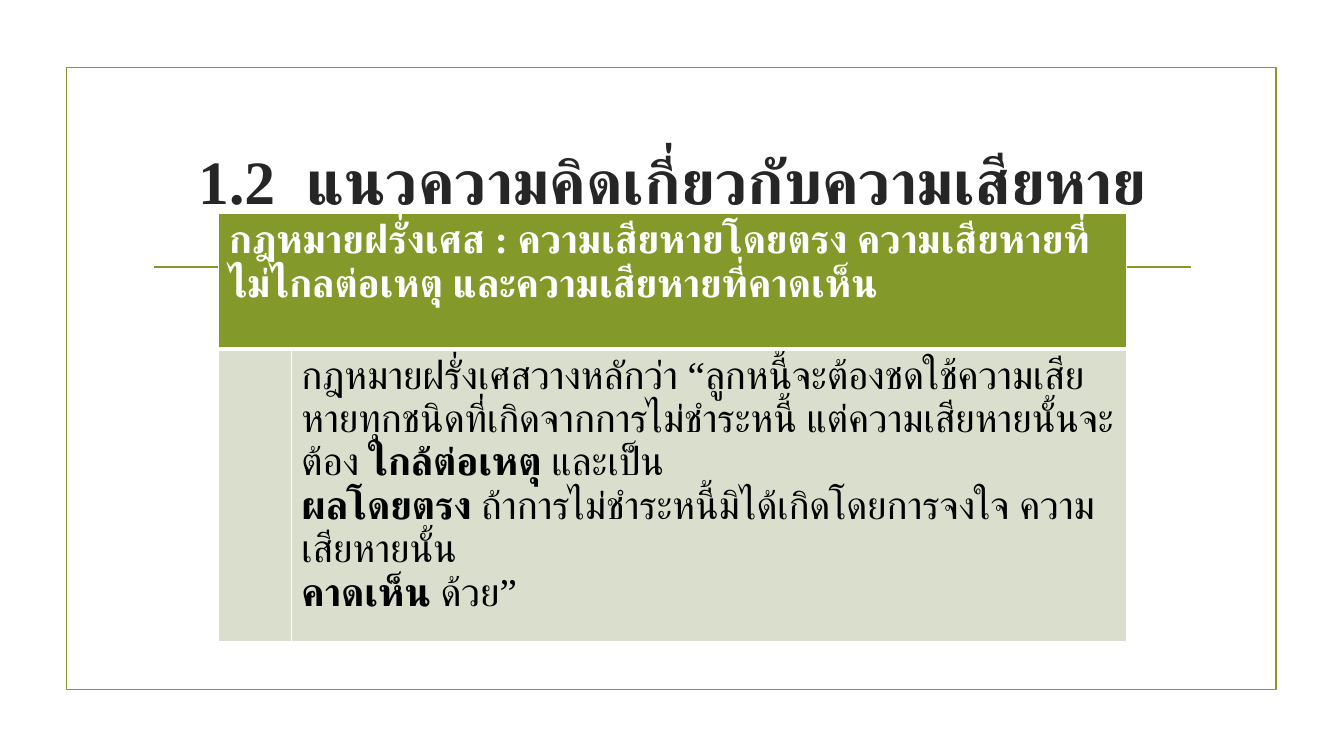
from pptx import Presentation
from pptx.dml.color import RGBColor
from pptx.enum.shapes import MSO_CONNECTOR, MSO_SHAPE
from pptx.enum.text import MSO_ANCHOR, PP_ALIGN
from pptx.oxml.ns import qn
from pptx.util import Inches, Pt
from lxml.etree import SubElement

COLORS = {"olive": "83992A", "pale": "D9DECD", "white": "FFFFFF",
          "black": "000000", "title": "262626"}
FONT = "Times New Roman"

TITLE = "1.2  แนวความคิดเกี่ยวกับความเสียหาย"
HEADING = "กฎหมายฝรั่งเศส : ความเสียหายโดยตรง ความเสียหายที่ไม่ไกลต่อเหตุ และความเสียหายที่คาดเห็น"
RULE = [
    [("กฎหมายฝรั่งเศสวางหลักว่า “ลูกหนี้จะต้องชดใช้ความเสียหายทุกชนิดที่เกิดจากการไม่ชำระหนี้ แต่ความเสียหายนั้นจะต้อง ", False),
     ("ใกล้ต่อเหตุ ", True), ("และเป็น", False)],
    [("ผลโดยตรง ", True),
     ("ถ้าการไม่ชำระหนี้มิได้เกิดโดยการจงใจ ความเสียหายนั้น", False)],
    [("คาดเห็น", True), (" ด้วย”", False)],
]


def color(name):
    return RGBColor.from_string(COLORS[name])


def write(frame, paragraphs, size, ink, align=PP_ALIGN.LEFT):
    frame.word_wrap = True
    for index, runs in enumerate(paragraphs):
        paragraph = frame.add_paragraph() if index else frame.paragraphs[0]
        paragraph.alignment = align
        for words, bold in runs:
            run = paragraph.add_run()
            run.text = words
            run.font.size = Pt(size)
            run.font.bold = bold
            run.font.name = FONT
            run.font.color.rgb = color(ink)
            SubElement(run.font._element, qn("a:cs"), typeface=FONT)


def add_border(slide, left, top, width, height):
    border = slide.shapes.add_shape(MSO_SHAPE.RECTANGLE, Inches(left), Inches(top),
                                    Inches(width), Inches(height))
    border.shadow.inherit = False
    border.fill.background()
    border.line.color.rgb = color("olive")
    border.line.width = Pt(1.25)


def add_rule(slide, left, top, width):
    rule = slide.shapes.add_connector(MSO_CONNECTOR.STRAIGHT, Inches(left), Inches(top),
                                      Inches(left + width), Inches(top))
    rule.line.color.rgb = color("olive")
    rule.line.width = Pt(1.25)
    SubElement(rule._element.spPr, qn("a:effectLst"))


def add_title(slide, left, top, width, height):
    title = slide.shapes.add_textbox(Inches(left), Inches(top), Inches(width), Inches(height))
    title.text_frame.vertical_anchor = MSO_ANCHOR.MIDDLE
    write(title.text_frame, [[(TITLE, True)]], 44, "title", PP_ALIGN.CENTER)


def style_cell(cell, fill, top_width, bottom_width):
    properties = cell._tc.get_or_add_tcPr()
    widths = {"a:lnL": 1, "a:lnR": 1, "a:lnT": top_width, "a:lnB": bottom_width}
    for side, width in widths.items():
        edge = SubElement(properties, qn(side), w=str(Pt(width)))
        SubElement(SubElement(edge, qn("a:solidFill")), qn("a:srgbClr"), val=COLORS["white"])
    cell.fill.solid()
    cell.fill.fore_color.rgb = color(fill)


def add_law_table(slide, left, top, width, height):
    table = slide.shapes.add_table(2, 2, Inches(left), Inches(top),
                                   Inches(width), Inches(height)).table
    margin_share, heading_share = 0.08, 0.32
    table.columns[0].width = Inches(width * margin_share)
    table.columns[1].width = Inches(width * (1 - margin_share))
    table.rows[0].height = Inches(height * heading_share)
    table.rows[1].height = Inches(height * (1 - heading_share))
    for column in range(2):
        style_cell(table.cell(0, column), "olive", 1, 3)
        style_cell(table.cell(1, column), "pale", 3, 1)
    table.cell(0, 0).merge(table.cell(0, 1))
    write(table.cell(0, 0).text_frame, [[(HEADING, True)]], 28, "white")
    write(table.cell(1, 1).text_frame, RULE, 28, "black")


def main():
    deck = Presentation()
    deck.slide_width, deck.slide_height = Inches(13.33), Inches(7.5)
    slide = deck.slides.add_slide(deck.slide_layouts[6])
    add_border(slide, 0.66, 0.67, 12, 6.17)
    add_rule(slide, 1.53, 2.65, 10.28)
    add_title(slide, 1.42, 1.07, 10.5, 1.43)
    add_law_table(slide, 2.17, 2.12, 9, 4.2)
    deck.save("out.pptx")


if __name__ == "__main__":
    main()
